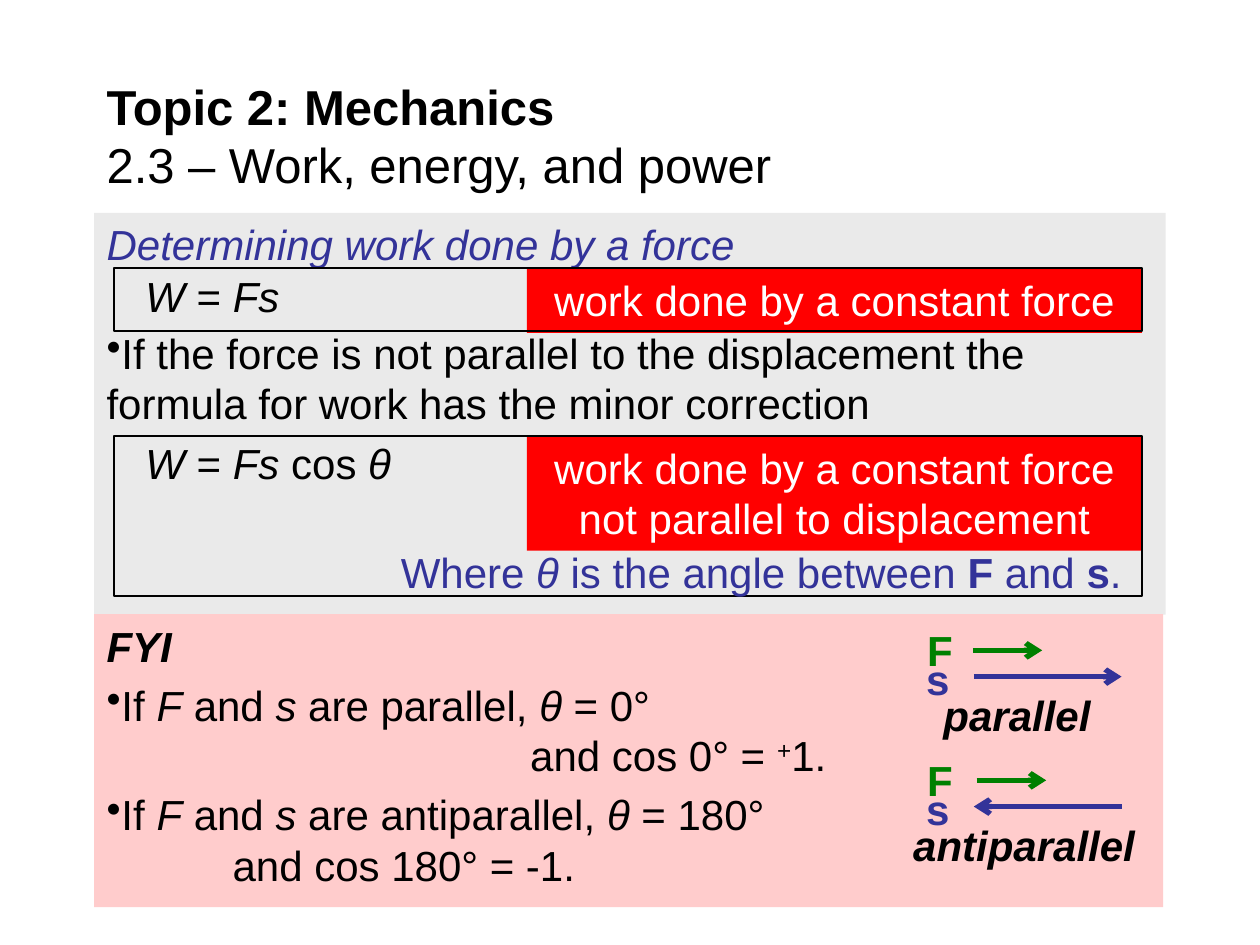
import pptx
import pptx.util
import pptx.dml.color
import pptx.enum.shapes
import pptx.enum.text
import pptx.oxml.ns
from lxml import etree

Cm, Pt = pptx.util.Cm, pptx.util.Pt
RGB = pptx.dml.color.RGBColor.from_string
ALIGN = pptx.enum.text.PP_ALIGN
RECT = pptx.enum.shapes.MSO_SHAPE.RECTANGLE
LINE = pptx.enum.shapes.MSO_CONNECTOR.STRAIGHT

THEME = {
    "font": "Arial", "head": 28, "body": 24, "gap": 5,
    "ink": "000000", "blue": "333399", "green": "008000", "white": "FFFFFF",
    "grey": "EAEAEA", "red": "FF0000", "pink": "FFCCCC",
}

# A run is (text, marks): b bold, i italic, + superscript.
# A paragraph is (runs, format).
TITLE = [([("Topic 2: Mechanics", "b"), ("\n", ""),
           ("2.3 – Work, energy, and power", "")], {"size": "head"})]
MAIN = [
    ([("Determining work done by a force", "i")], {"color": "blue"}),
    ([("If the force is not parallel to the displacement the "
       "formula for work has the minor correction", "")],
     {"bullet": True, "before": 33}),
]
PAIR = [("F", "i"), (" and ", ""), ("s", "i")]
FYI = [
    ([("FYI", "bi")], {}),
    ([("If ", ""), *PAIR, (" are parallel, ", ""), ("θ", "i"), (" = 0°", "")],
     {"bullet": True, "before": THEME["gap"]}),
    ([("and cos 0° = ", ""), ("+", "+"), ("1.", "")], {"left": 8.54}),
    ([("If ", ""), *PAIR, (" are antiparallel, ", ""), ("θ", "i"),
      (" = 180°", "")], {"bullet": True, "before": THEME["gap"]}),
    ([("and cos 180° = -1.", "")], {"left": 2.54}),
]
NOTE = [([("Where ", ""), ("θ", "i"), (" is the angle between ", ""),
          ("F", "b"), (" and ", ""), ("s", "b"), (".", "")],
         {"color": "blue", "align": ALIGN.RIGHT, "lines": 0.9})]

# top, height, label height, formula, label
CARDS = [
    (5.41, 1.27, 1.3, [("W", "i"), (" = ", ""), ("Fs", "i")],
     "work done by a constant force"),
    (8.79, 3.23, 2.31,
     [("W", "i"), (" = ", ""), ("Fs ", "i"), ("cos ", ""), ("θ", "i")],
     "work done by a constant force not parallel to displacement"),
]
# name, left, width, start of F arrow, arrowhead end of s arrow
CASES = [("parallel", 18.77, 3.5, 19.61, "tailEnd"),
         ("antiparallel", 18.16, 5.03, 19.69, "headEnd")]
CASE_TOP, CASE_STEP = 12.47, 2.62

deck = pptx.Presentation()
deck.slide_width, deck.slide_height = Cm(25.4), Cm(19.05)
slide = deck.slides.add_slide(deck.slide_layouts[6])


def place(*box):
    return [Cm(n) for n in box]


def assign(thing, values):
    for name, value in values.items():
        setattr(thing, name, value)


def write(frame, paras, wrap=True, anchor=pptx.enum.text.MSO_ANCHOR.TOP):
    assign(frame, {"word_wrap": wrap, "vertical_anchor": anchor})
    for n, (runs, form) in enumerate(paras):
        para = frame.add_paragraph() if n else frame.paragraphs[0]
        assign(para, {"alignment": form.get("align", ALIGN.LEFT),
                      "line_spacing": form.get("lines", 1.0),
                      "space_before": Pt(form.get("before", 0))})
        props = para._p.get_or_add_pPr()
        props.set("marL", str(Cm(form.get("left", 0))))
        props.set("indent", "0")
        if form.get("bullet"):
            mark = etree.SubElement(props, pptx.oxml.ns.qn("a:buChar"))
            mark.set("char", "•")
        for text, marks in runs:
            if text == "\n":
                para.add_line_break()
                continue
            run = para.add_run()
            run.text = text
            assign(run.font, {"name": THEME["font"],
                              "size": Pt(THEME[form.get("size", "body")]),
                              "bold": "b" in marks, "italic": "i" in marks})
            run.font.color.rgb = RGB(THEME[form.get("color", "ink")])
            if "+" in marks:
                run._r.get_or_add_rPr().set("baseline", "30000")


def label(box, paras, **form):
    write(slide.shapes.add_textbox(*place(*box)).text_frame, paras, **form)


def block(box, fill=None, paras=()):
    """Draw a filled box, or a thin black outline when no fill is given."""
    shape = slide.shapes.add_shape(RECT, *place(*box))
    shape.shadow.inherit = False
    if fill:
        shape.fill.solid()
        shape.fill.fore_color.rgb = RGB(THEME[fill])
        shape.line.fill.background()
    else:
        shape.fill.background()
        shape.line.color.rgb = RGB(THEME["ink"])
        shape.line.width = Pt(1)
    write(shape.text_frame, paras)


def arrow(start, end, y, color, tip):
    line = slide.shapes.add_connector(LINE, *place(start, y, end, y))
    line.line.color.rgb = RGB(THEME[color])
    line.line.width = Pt(3)
    head = etree.SubElement(line.line._get_or_add_ln(),
                            pptx.oxml.ns.qn("a:" + tip))
    head.set("type", "arrow")
    etree.SubElement(line._element.spPr, pptx.oxml.ns.qn("a:effectLst"))


block((1.9, 4.29, 21.6, 8.1), "grey", MAIN)
label((1.9, 1.47, 21.6, 2.5), TITLE, anchor=pptx.enum.text.MSO_ANCHOR.MIDDLE)

for top, high, tall, rule, name in CARDS:
    label((2.68, top + 0.03, 6.5, 0.9), [(rule, {"lines": 0.9})])
    block((10.62, top, 12.4, tall), "red",
          [([(name, "")], {"color": "white", "align": ALIGN.CENTER})])
    block((2.3, top, 20.73, high))
label((3, 11, 19.86, 1.07), NOTE)

block((1.9, 12.38, 21.55, 5.91), "pink", FYI)
for n, (name, left, wide, start, tip) in enumerate(CASES):
    top = CASE_TOP + n * CASE_STEP
    arrow(start, start + 1.4, top + 0.64, "green", "tailEnd")
    arrow(19.63, 22.61, top + 1.17, "blue", tip)
    for text, x, down, width, marks, color in [
            ("F", 18.44, 0, 1.04, "b", "green"),
            ("s", 18.42, 0.58, 0.99, "b", "blue"),
            (name, left, 1.3, wide, "bi", "ink")]:
        label((x, top + down, width, 1.3),
              [([(text, marks)], {"color": color})], wrap=False)

deck.save("out.pptx")
